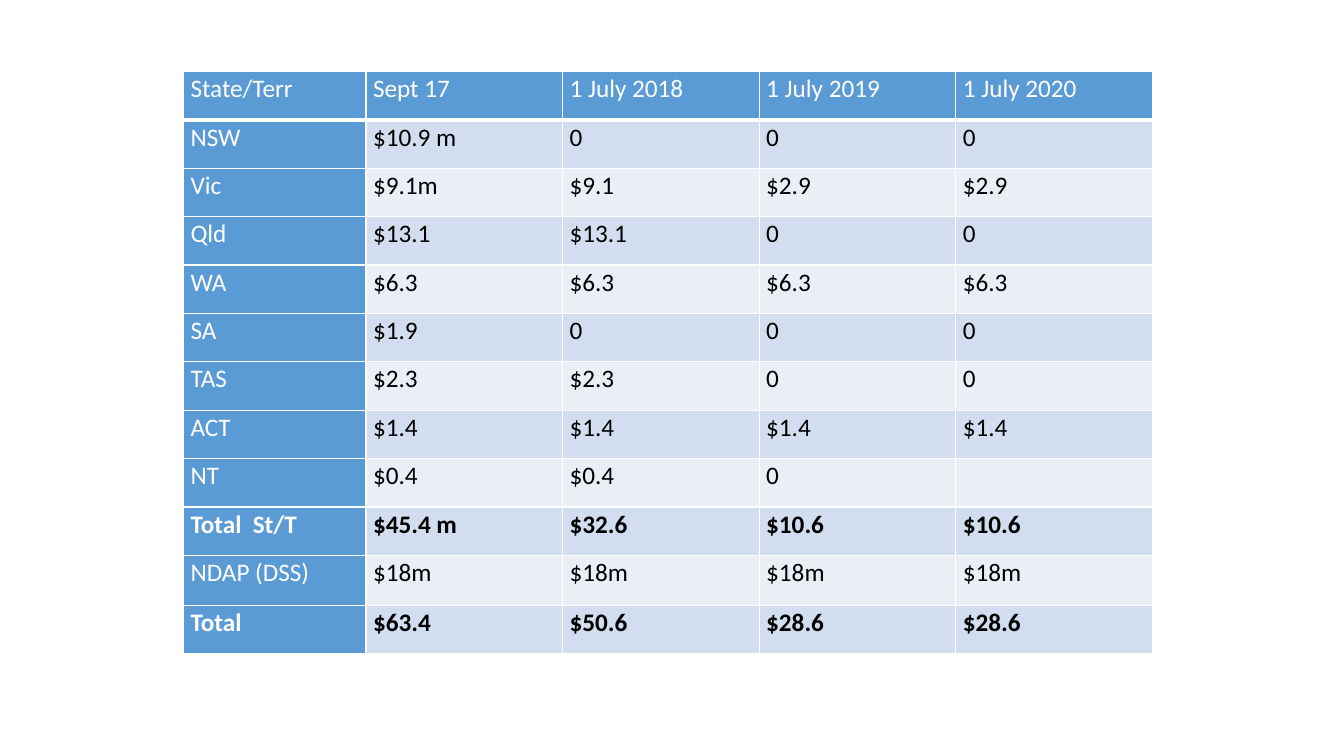
from dataclasses import dataclass

from lxml.etree import SubElement
from pptx import Presentation
from pptx.dml.color import RGBColor
from pptx.oxml.ns import qn
from pptx.util import Inches, Pt

FUNDING = [
    ("State/Terr", "Sept 17", "1 July 2018", "1 July 2019", "1 July 2020"),
    ("NSW", "$10.9 m", "0", "0", "0"),
    ("Vic", "$9.1m", "$9.1", "$2.9", "$2.9"),
    ("Qld", "$13.1", "$13.1", "0", "0"),
    ("WA", "$6.3", "$6.3", "$6.3", "$6.3"),
    ("SA", "$1.9", "0", "0", "0"),
    ("TAS", "$2.3", "$2.3", "0", "0"),
    ("ACT", "$1.4", "$1.4", "$1.4", "$1.4"),
    ("NT", "$0.4", "$0.4", "0", ""),
    ("Total  St/T", "$45.4 m", "$32.6", "$10.6", "$10.6"),
    ("NDAP (DSS)", "$18m", "$18m", "$18m", "$18m"),
    ("Total", "$63.4", "$50.6", "$28.6", "$28.6"),
]
TOTAL_LABELS = {"Total  St/T", "Total"}
TALL_LABEL = "NDAP (DSS)"

SLIDE_SIZE = (13.33, 7.5)
TABLE_ORIGIN = (1.82, 0.71)
LABEL_WIDTH, DATE_WIDTH = 1.81, 1.95
ROW_HEIGHT, TALL_HEIGHT = 0.48, 0.5
CELL_MARGINS = {"margin_left": Inches(0.07), "margin_right": Inches(0.07),
                "margin_top": 0, "margin_bottom": 0}


@dataclass(frozen=True)
class Theme:
    font: str = "Calibri"
    size: int = 18
    line_spacing: float = 1.07
    heading_fill: str = "5B9BD5"
    bands: tuple = ("EAEFF7", "D2DEEF")
    heading_text: str = "FFFFFF"
    body_text: str = "000000"
    border: str = "FFFFFF"
    border_width: int = 1
    heading_border_width: int = 3


THEME = Theme()


def add_borders(cell, is_header):
    properties = cell._tc.get_or_add_tcPr()
    bottom = THEME.heading_border_width if is_header else THEME.border_width
    widths = {"lnL": THEME.border_width, "lnR": THEME.border_width,
              "lnT": THEME.border_width, "lnB": bottom}
    for position, (side, width) in enumerate(widths.items()):
        line = SubElement(properties, qn(f"a:{side}"), w=str(Pt(width)))
        fill = SubElement(line, qn("a:solidFill"))
        SubElement(fill, qn("a:srgbClr"), val=THEME.border)
        properties.insert(position, line)


def format_cell(cell, text, row, column, bold):
    is_heading = row == 0 or column == 0
    for name, value in CELL_MARGINS.items():
        setattr(cell, name, value)
    cell.fill.solid()
    cell.fill.fore_color.rgb = RGBColor.from_string(
        THEME.heading_fill if is_heading else THEME.bands[row % 2])
    add_borders(cell, row == 0)
    para = cell.text_frame.paragraphs[0]
    para.line_spacing = THEME.line_spacing
    if text:
        span = para.add_run()
        span.text = text
        font_format = {"name": THEME.font, "size": Pt(THEME.size), "bold": bold}
        for name, value in font_format.items():
            setattr(span.font, name, value)
        span.font.color.rgb = RGBColor.from_string(
            THEME.heading_text if is_heading else THEME.body_text)


def add_funding_table(page):
    widths = [LABEL_WIDTH] + [DATE_WIDTH] * (len(FUNDING[0]) - 1)
    heights = [TALL_HEIGHT if record[0] == TALL_LABEL else ROW_HEIGHT
               for record in FUNDING]
    frame = (*TABLE_ORIGIN, sum(widths), sum(heights))
    table = page.shapes.add_table(len(heights), len(widths), *map(Inches, frame)).table
    for column, width in zip(table.columns, widths):
        column.width = Inches(width)
    for row, height in zip(table.rows, heights):
        row.height = Inches(height)
    for row, record in enumerate(FUNDING):
        for column, text in enumerate(record):
            format_cell(table.cell(row, column), text, row, column,
                        record[0] in TOTAL_LABELS)


def main():
    deck = Presentation()
    deck.slide_width, deck.slide_height = map(Inches, SLIDE_SIZE)
    page = deck.slides.add_slide(deck.slide_layouts[6])
    add_funding_table(page)
    deck.save("out.pptx")


if __name__ == "__main__":
    main()
